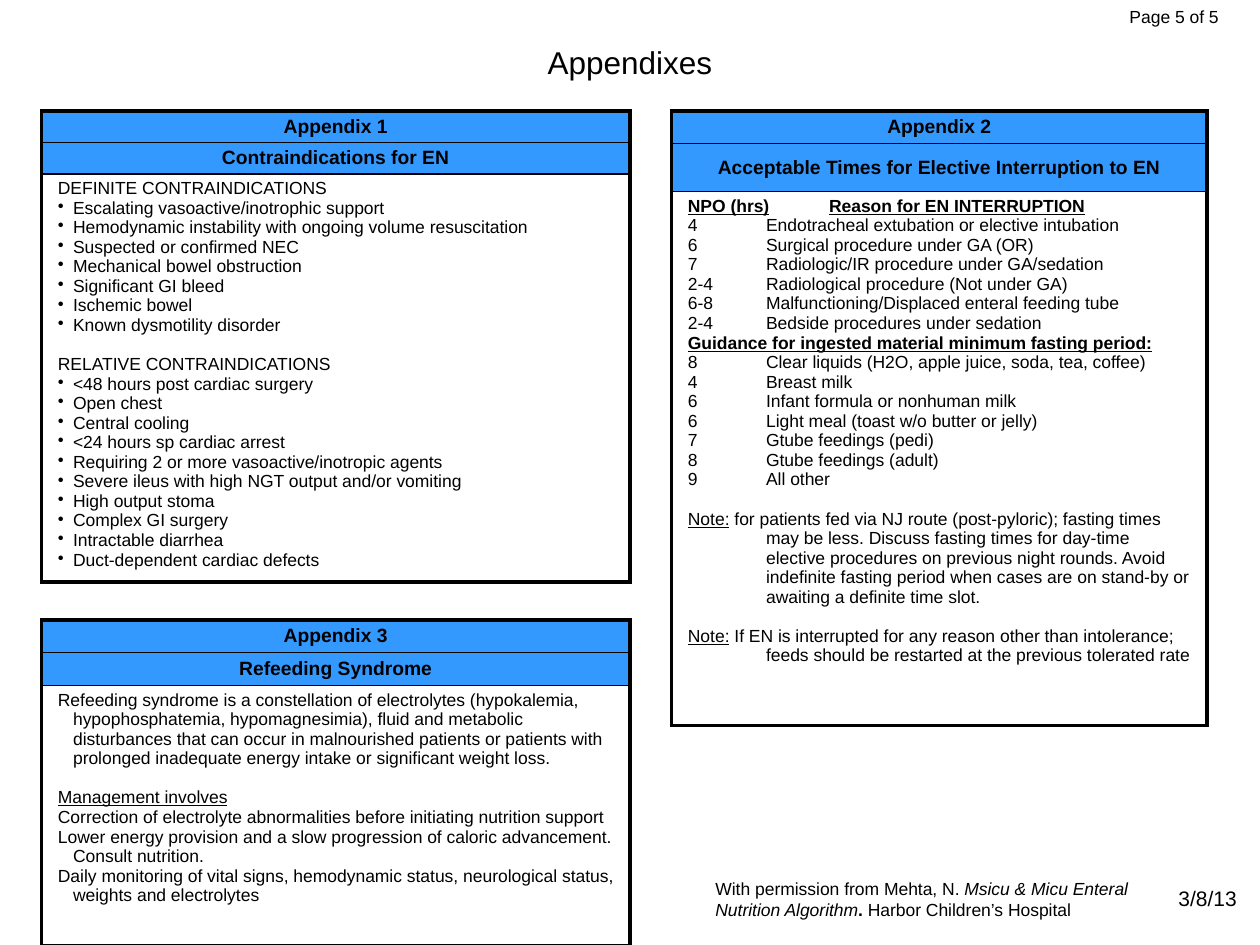
from dataclasses import dataclass

from lxml.etree import SubElement
from pptx import Presentation
from pptx.dml.color import RGBColor
from pptx.enum.text import MSO_ANCHOR as Anchor, PP_ALIGN as Align
from pptx.oxml.ns import qn
from pptx.util import Inches, Pt


@dataclass(frozen=True)
class Theme:
    font: str = "Arial"
    ink: RGBColor = RGBColor(0, 0, 0)
    band: RGBColor = RGBColor(0x33, 0x99, 0xFF)
    title: int = 18
    date: int = 12
    heading: int = 11
    body: int = 10
    frame: float = 2.25
    rule: float = 1
    gap: float = 11.2


THEME = Theme()

# A line is (kind, text); "gap" in the kind leaves a blank line above it.
# A text may be a list of (words, style letters): b bold, i italic, u underline.
CONTRAINDICATIONS = [
    ("plain", "DEFINITE CONTRAINDICATIONS"),
    ("bullet", "Escalating vasoactive/inotrophic support"),
    ("bullet", "Hemodynamic instability with ongoing volume resuscitation"),
    ("bullet", "Suspected or confirmed NEC"),
    ("bullet", "Mechanical bowel obstruction"),
    ("bullet", "Significant GI bleed"),
    ("bullet", "Ischemic bowel"),
    ("bullet", "Known dysmotility disorder"),
    ("gap", "RELATIVE CONTRAINDICATIONS"),
    ("bullet", "<48 hours post cardiac surgery"),
    ("bullet", "Open chest"),
    ("bullet", "Central cooling"),
    ("bullet", "<24 hours sp cardiac arrest"),
    ("bullet", "Requiring 2 or more vasoactive/inotropic agents"),
    ("bullet", "Severe ileus with high NGT output and/or vomiting"),
    ("bullet", "High output stoma"),
    ("bullet", "Complex GI surgery"),
    ("bullet", "Intractable diarrhea"),
    ("bullet", "Duct-dependent cardiac defects"),
]
INTERRUPTIONS = [
    ("plain", [("NPO (hrs)\tReason for EN INTERRUPTION", "bu")]),
    ("plain", "4\tEndotracheal extubation or elective intubation"),
    ("plain", "6\tSurgical procedure under GA (OR)"),
    ("plain", "7\tRadiologic/IR procedure under GA/sedation"),
    ("plain", "2-4\tRadiological procedure (Not under GA)"),
    ("plain", "6-8\tMalfunctioning/Displaced enteral feeding tube"),
    ("plain", "2-4\tBedside procedures under sedation"),
    ("plain", [("Guidance for ingested material minimum fasting period:", "bu")]),
    ("plain", "8\tClear liquids (H2O, apple juice, soda, tea, coffee)"),
    ("plain", "4\tBreast milk"),
    ("plain", "6\tInfant formula or nonhuman milk"),
    ("plain", "6\tLight meal (toast w/o butter or jelly)"),
    ("plain", "7\tGtube feedings (pedi)"),
    ("plain", "8\tGtube feedings (adult)"),
    ("plain", "9\tAll other"),
    ("gap", [("Note:", "u"), (
        " for patients fed via NJ route (post-pyloric); fasting times may be less. "
        "Discuss fasting times for day-time elective procedures on previous night "
        "rounds. Avoid indefinite fasting period when cases are on stand-by or "
        "awaiting a definite time slot.", "")]),
    ("gap", [("Note:", "u"), (
        " If EN is interrupted for any reason other than intolerance; feeds should "
        "be restarted at the previous tolerated rate", "")]),
]
REFEEDING = [
    ("plain", "Refeeding syndrome is a constellation of electrolytes (hypokalemia, "
              "hypophosphatemia, hypomagnesimia), fluid and metabolic disturbances that "
              "can occur in malnourished patients or patients with prolonged inadequate "
              "energy intake or significant weight loss."),
    ("gap", [("Management involves", "u")]),
    ("plain", "Correction of electrolyte abnormalities before initiating nutrition support"),
    ("plain", "Lower energy provision and a slow progression of caloric advancement. "
              "Consult nutrition."),
    ("plain", "Daily monitoring of vital signs, hemodynamic status, neurological status, "
              "weights and electrolytes"),
]

# name, heading, lines, (left, top, width), row heights, hanging indent
APPENDIXES = [
    ("Appendix 1", "Contraindications for EN", CONTRAINDICATIONS,
     (0.33, 0.88, 4.67), (0.24, 0.24, 3.24), 0.12),
    ("Appendix 2", "Acceptable Times for Elective Interruption to EN", INTERRUPTIONS,
     (5.33, 0.88, 4.25), (0.26, 0.38, 4.24), 0.62),
    ("Appendix 3", "Refeeding Syndrome", REFEEDING,
     (0.33, 4.92, 4.67), (0.26, 0.26, 2.07), 0.12),
]

CREDIT = [("With permission from Mehta, N. ", ""),
          ("Msicu & Micu Enteral Nutrition Algorithm", "i"),
          (". ", "b"), ("Harbor Children’s Hospital", "")]
# text, (left, top, width, height), size, alignment
NOTES = [
    (CREDIT, (5.58, 6.92, 3.86, 0.44), THEME.body, Align.LEFT),
    ("Page 5 of 5", (7.44, 0, 2.33, 0.52), THEME.body, Align.RIGHT),
    ("3/8/13", (8, 6.98, 3.17, 0.52), THEME.date, Align.CENTER),
]


def write(para, text, size, align=Align.LEFT, bold=False):
    para.alignment = align
    font = para.font
    font.name, font.size, font.bold = THEME.font, Pt(size), bold
    font.color.rgb = THEME.ink
    for words, style in [(text, "")] if isinstance(text, str) else text:
        span = para.add_run()
        span.text = words
        if "b" in style:
            span.font.bold = True
        if "i" in style:
            span.font.italic = True
        if "u" in style:
            span.font.underline = True


def hang(para, indent, bullet):
    props = para._p.get_or_add_pPr()
    props.set("marL", str(Inches(indent)))
    props.set("indent", str(-Inches(indent)))
    if bullet:
        mark = props.makeelement(qn("a:buChar"), {"char": "•"})
        props.insert_element_before(mark, "a:tabLst", "a:defRPr", "a:extLst")


def style_cell(cell, fill, top, bottom):
    cell.margin_left = cell.margin_right = Inches(0.13)
    cell.margin_top = cell.margin_bottom = Inches(0.04)
    props = cell._tc.get_or_add_tcPr()
    sides = {"lnL": THEME.frame, "lnR": THEME.frame, "lnT": top, "lnB": bottom}
    for side, width in sides.items():
        line = SubElement(props, qn(f"a:{side}"), w=str(Pt(width)))
        color = SubElement(SubElement(line, qn("a:solidFill")), qn("a:srgbClr"))
        color.set("val", str(THEME.ink))
    if fill is None:
        cell.fill.background()
    else:
        cell.fill.solid()
        cell.fill.fore_color.rgb = fill


def add_appendix(page, name, heading, lines, place, heights, indent):
    left, top, width = map(Inches, place)
    table = page.shapes.add_table(3, 1, left, top, width, Inches(sum(heights))).table
    table.first_row = table.horz_banding = False
    for row, height in zip(table.rows, heights):
        row.height = Inches(height)
    title, subject, body = (row.cells[0] for row in table.rows)
    style_cell(title, THEME.band, THEME.frame, THEME.rule)
    style_cell(subject, THEME.band, THEME.rule, THEME.rule)
    style_cell(body, None, THEME.rule, THEME.frame)
    subject.vertical_anchor = Anchor.MIDDLE
    for cell, text in ((title, name), (subject, heading)):
        write(cell.text_frame.paragraphs[0], text, THEME.heading, Align.CENTER, True)
    for index, (kind, text) in enumerate(lines):
        frame = body.text_frame
        para = frame.add_paragraph() if index else frame.paragraphs[0]
        write(para, text, THEME.body)
        if kind == "gap":
            para.space_before = Pt(THEME.gap)
        hang(para, indent, kind == "bullet")


def main():
    deck = Presentation()
    deck.slide_width, deck.slide_height = Inches(10), Inches(7.5)
    page = deck.slides.add_slide(deck.slide_layouts[5])

    title = page.shapes.title
    title.left, title.top, title.width, title.height = map(Inches, (0.5, 0.3, 9, 0.39))
    title.text_frame.vertical_anchor = Anchor.MIDDLE
    write(title.text_frame.paragraphs[0], "Appendixes", THEME.title, Align.CENTER)

    for appendix in APPENDIXES:
        add_appendix(page, *appendix)
    for text, place, size, align in NOTES:
        box = page.shapes.add_textbox(*map(Inches, place))
        box.text_frame.word_wrap = True
        write(box.text_frame.paragraphs[0], text, size, align)
    deck.save("out.pptx")


if __name__ == "__main__":
    main()
